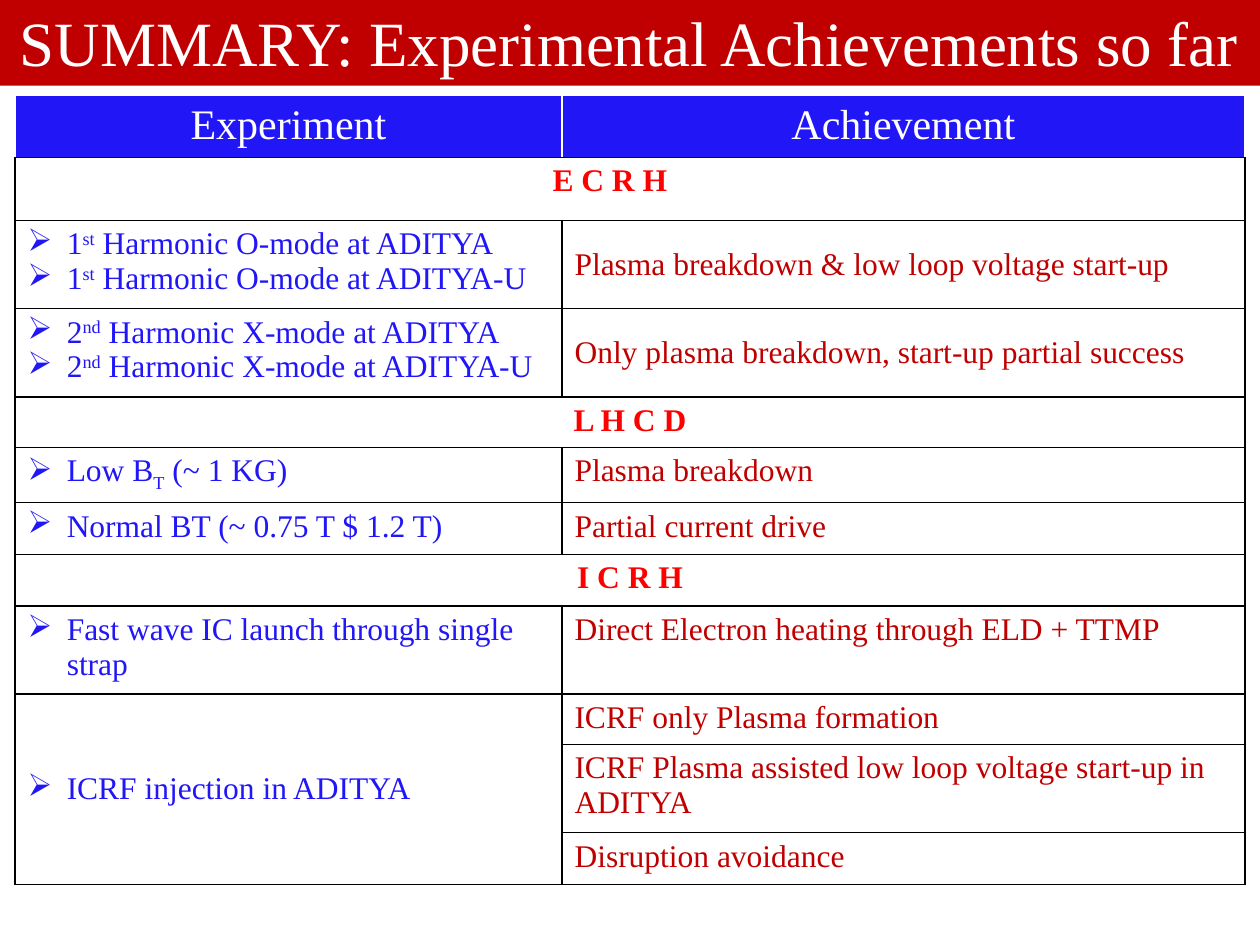
"""Build the summary slide of experimental achievements as a titled table."""
from lxml import etree
from pptx import Presentation
from pptx.dml.color import RGBColor
from pptx.enum.text import MSO_ANCHOR, MSO_AUTO_SIZE, PP_ALIGN
from pptx.oxml.ns import qn
from pptx.util import Inches, Pt

CENTER, LEFT = PP_ALIGN.CENTER, PP_ALIGN.LEFT
MIDDLE, TOP = MSO_ANCHOR.MIDDLE, MSO_ANCHOR.TOP
WHITE, BLACK, BLUE, RED, DARK_RED = "FFFFFF", "000000", "2116F6", "FF0000", "C00000"
SUPER, SUB = "30000", "-25000"


def write(paragraph, runs, color, align=LEFT, size=18, bold=False):
    paragraph.alignment = align
    for text, baseline in runs:
        run = paragraph.add_run()
        run.text = text
        run.font.color.rgb = RGBColor.from_string(color)
        formats = {"name": "Times New Roman", "size": Pt(size), "bold": bold}
        for attribute, value in formats.items():
            setattr(run.font, attribute, value)
        if baseline:
            run.font._element.set("baseline", baseline)


def add_borders(cell, colors):
    properties = cell._tc.get_or_add_tcPr()
    for index, (side, color) in enumerate(zip(("lnL", "lnR", "lnT", "lnB"), colors)):
        line = etree.Element(qn(f"a:{side}"), w=str(Pt(1)))
        fill = etree.SubElement(line, qn("a:solidFill"))
        etree.SubElement(fill, qn("a:srgbClr"), val=color)
        properties.insert(index, line)


presentation = Presentation()
presentation.slide_width, presentation.slide_height = Inches(10), Inches(7.5)
slide = presentation.slides.add_slide(presentation.slide_layouts[5])

title = slide.shapes.title
banner = {"left": -0.01, "top": -0.03, "width": 10.01, "height": 0.71}
for attribute, value in banner.items():
    setattr(title, attribute, Inches(value))
title.fill.solid()
title.fill.fore_color.rgb = RGBColor.from_string(DARK_RED)
title.text_frame.auto_size = MSO_AUTO_SIZE.NONE
title.text_frame.vertical_anchor = MIDDLE
write(title.text_frame.paragraphs[0],
      [("SUMMARY: Experimental Achievements so far", None)], WHITE, CENTER, 36)

harmonics = {
    order: [[(order[0], None), (order[1:], SUPER), (f" Harmonic {mode}-mode at {machine}", None)]
            for machine in ("ADITYA", "ADITYA-U")]
    for order, mode in (("1st", "O"), ("2nd", "X"))
}
rows = [
    (0.49, "Experiment", "Achievement"),
    (0.5, "E C R H", None),
    (0.7, harmonics["1st"], "Plasma breakdown & low loop voltage start-up"),
    (0.7, harmonics["2nd"], "Only plasma breakdown, start-up partial success"),
    (0.4, "L H C D", None),
    (0.44, [[("Low B", None), ("T", SUB), (" (~ 1 KG)", None)]], "Plasma breakdown"),
    (0.41, [[("Normal BT (~ 0.75 T $ 1.2 T)", None)]], "Partial current drive"),
    (0.41, "I C R H", None),
    (0.7, [[("Fast wave IC launch through single strap", None)]],
     "Direct Electron heating through ELD + TTMP"),
    (0.4, [[("ICRF injection in ADITYA", None)]], "ICRF only Plasma formation"),
    (0.7, [], "ICRF Plasma assisted low loop voltage start-up in ADITYA"),
    (0.41, [], "Disruption avoidance"),
]
table = slide.shapes.add_table(len(rows), 2, Inches(0.12), Inches(0.76), Inches(9.76),
                               Inches(sum(row[0] for row in rows))).table
for column, width in zip(table.columns, (4.34, 5.42)):
    column.width = Inches(width)

for index, (height, experiment, achievement) in enumerate(rows):
    table.rows[index].height = Inches(height)
    left_cell, right_cell = table.cell(index, 0), table.cell(index, 1)
    is_header = index == 0
    for cell in (left_cell, right_cell):
        cell.fill.solid()
        cell.fill.fore_color.rgb = RGBColor.from_string(BLUE if is_header else WHITE)
        add_borders(cell, [WHITE] * 3 + [BLACK] if is_header else [BLACK] * 4)
    if is_header:
        for cell, heading in ((left_cell, experiment), (right_cell, achievement)):
            write(cell.text_frame.paragraphs[0], [(heading, None)], WHITE, CENTER, 24)
        continue
    if achievement is None:
        left_cell.merge(right_cell)
        write(left_cell.text_frame.paragraphs[0], [(experiment, None)], RED, CENTER, bold=True)
        continue
    for number, runs in enumerate(experiment):
        frame = left_cell.text_frame
        paragraph = frame.add_paragraph() if number else frame.paragraphs[0]
        write(paragraph, runs, BLUE)
        properties = paragraph._p.get_or_add_pPr()
        properties.set("marL", str(Inches(0.31)))
        properties.set("indent", str(-Inches(0.31)))
        etree.SubElement(properties, qn("a:buFont"), typeface="Wingdings")
        etree.SubElement(properties, qn("a:buChar"), char="Ø")
    write(right_cell.text_frame.paragraphs[0], [(achievement, None)], DARK_RED)
    right_cell.vertical_anchor = MIDDLE if len(experiment) == 2 else TOP

table.cell(1, 0).margin_right = Inches(0.42)
injection = table.cell(9, 0)
injection.merge(table.cell(11, 0))
injection.vertical_anchor = MIDDLE

presentation.save("out.pptx")
